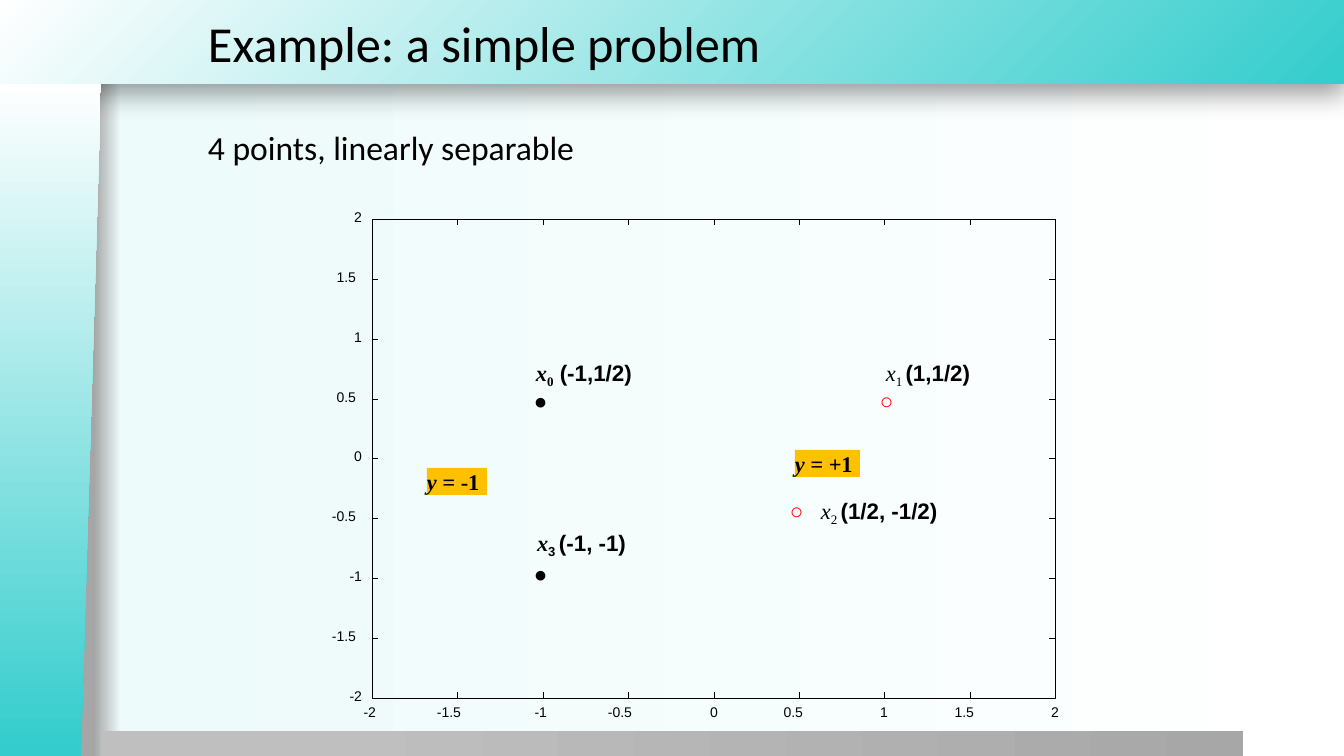
from lxml import etree
from pptx import Presentation
from pptx.dml.color import RGBColor
from pptx.enum.shapes import MSO_CONNECTOR, MSO_SHAPE
from pptx.enum.text import MSO_ANCHOR, PP_ALIGN
from pptx.oxml import parse_xml
from pptx.oxml.ns import nsdecls, qn
from pptx.util import Pt

PX = 914400 / 100.8
BLACK = RGBColor(0x00, 0x00, 0x00)
RED = RGBColor(0xFF, 0x00, 0x00)
AMBER = RGBColor(0xFF, 0xC0, 0x00)
TEAL = RGBColor(0x34, 0xCC, 0xCC)
PALE_TEAL = RGBColor(0xED, 0xFB, 0xFB)
WHITE = RGBColor(0xFF, 0xFF, 0xFF)
GRAY = RGBColor(0xA6, 0xA6, 0xA6)
FOOT_GRAY = RGBColor(0xA7, 0xA7, 0xA7)
LIGHT_GRAY = RGBColor(0xBF, 0xBF, 0xBF)
HAIRLINE = Pt(0.1)
LINEAR = '<a:lin ang="0" scaled="0"/>'
RADIAL = '<a:path path="circle"><a:fillToRect l="100000" t="100000"/></a:path>'

prs = Presentation()
prs.slide_width, prs.slide_height = round(1344 * PX), round(756 * PX)
s = prs.slides.add_slide(prs.slide_layouts[6])


def set_gradient(props, stops, direction=LINEAR):
    """Replace the solid fill in props by a gradient of (percent, colour) stops."""
    gs = "".join(f'<a:gs pos="{pos * 1000}"><a:srgbClr val="{color}"/></a:gs>'
                 for pos, color in stops)
    solid = props.find(qn("a:solidFill"))
    props.replace(solid, parse_xml(
        f'<a:gradFill {nsdecls("a")} rotWithShape="1"><a:gsLst>{gs}</a:gsLst>'
        f'{direction}</a:gradFill>'))


def add_text(runs, x, y, w, h, size=16, font="Times New Roman", color=BLACK,
             fill=None, align=PP_ALIGN.LEFT, anchor=MSO_ANCHOR.TOP, inset=(0, 0)):
    """Add one line of text; runs is a string or a list of (text, style) pairs."""
    sp = s.shapes.add_textbox(*(round(v * PX) for v in (x, y, w, h)))
    if fill is not None:
        sp.fill.solid()
        sp.fill.fore_color.rgb = fill
    tf = sp.text_frame
    tf.word_wrap = False
    tf.vertical_anchor = anchor
    tf.margin_left = tf.margin_right = round(inset[0] * PX)
    tf.margin_top = tf.margin_bottom = round(inset[1] * PX)
    p = tf.paragraphs[0]
    p.alignment = align
    for text, style in [(runs, {})] if isinstance(runs, str) else runs:
        r = p.add_run()
        r.text = text
        r.font.name = style.get("font", font)
        r.font.size = Pt(size)
        r.font.color.rgb = color
        r.font.bold = style.get("bold", False)
        r.font.italic = style.get("italic", False)
        if style.get("sub"):
            r.font._element.set("baseline", "-25000")


# Background and decorative bands
s.background.fill.solid()
s.background.fill.fore_color.rgb = WHITE
set_gradient(s.element.find(".//" + qn("p:bgPr")),
             [(7, GRAY), (9, PALE_TEAL), (100, WHITE)])

bands = []
for kind, box, stops, direction in [
    (MSO_SHAPE.RECTANGLE, (-1, 0, 1345, 84), [(0, TEAL), (100, WHITE)], RADIAL),
    (MSO_SHAPE.RECTANGLE, (101, 731, 1142, 26), [(20, LIGHT_GRAY), (100, FOOT_GRAY)], LINEAR),
    (MSO_SHAPE.FLOWCHART_MANUAL_INPUT, (-286, 370, 673, 101), [(1, TEAL), (100, WHITE)], LINEAR),
]:
    sp = s.shapes.add_shape(kind, *(round(v * PX) for v in box))
    sp.shadow.inherit = False
    sp.line.fill.background()
    sp.fill.solid()
    sp.fill.fore_color.rgb = WHITE
    set_gradient(sp._element.spPr, stops, direction)
    bands.append(sp)

header, footer, side = bands
side.rotation = 270
side._element.spPr.xfrm.set("flipV", "1")
header._element.spPr.find(qn("a:effectLst")).append(parse_xml(
    f'<a:outerShdw {nsdecls("a")} blurRad="{Pt(20)}" dist="{Pt(6)}" dir="5400000" '
    'algn="t" rotWithShape="0"><a:srgbClr val="000000"><a:alpha val="40000"/>'
    '</a:srgbClr></a:outerShdw>'))

add_text("Example: a simple problem", 198, 0, 1146, 84, size=36, font="Calibri",
         anchor=MSO_ANCHOR.MIDDLE, inset=(10, 5))
add_text("4 points, linearly separable", 198, 122, 806, 56, size=24, font="Calibri",
         inset=(10, 5))

# Plot frame, ticks and axis labels
LEFT, TOP, WIDTH, HEIGHT, TICK = 372, 219, 683, 479, 6
RIGHT, BOTTOM = LEFT + WIDTH, TOP + HEIGHT
LABEL_WIDTHS = {1: 10, 2: 15, 3: 23, 4: 28}
frame = s.shapes.add_shape(MSO_SHAPE.RECTANGLE,
                           *(round(v * PX) for v in (LEFT, TOP, WIDTH, HEIGHT)))
frame.shadow.inherit = False
frame.fill.background()
frame.line.color.rgb = BLACK
frame.line.width = HAIRLINE

for i in range(9):
    x = LEFT + round(i * WIDTH / 8)
    y = BOTTOM - round(i * HEIGHT / 8)
    for ends in [(x, BOTTOM, x, BOTTOM - TICK), (x, TOP, x, TOP + TICK),
                 (LEFT, y, LEFT + TICK, y), (RIGHT, y, RIGHT - TICK, y)]:
        tick = s.shapes.add_connector(MSO_CONNECTOR.STRAIGHT, *(round(v * PX) for v in ends))
        tick.line.color.rgb = BLACK
        tick.line.width = HAIRLINE
        etree.SubElement(tick._element.spPr, qn("a:effectLst"))
    label = f"{i / 2 - 2:g}"
    w = LABEL_WIDTHS[len(label)]
    label_right = 356 if i % 2 else 362
    for label_x, label_y in [(x + 4 - w, 704), (label_right - w, y - 10)]:
        add_text(label, label_x, label_y, w, 17, size=10, font="Arial", align=PP_ALIGN.RIGHT)

# Class tags
BOLD = {"bold": True}
BOLD_ITALIC = {"bold": True, "italic": True}
for value, x, y, w in [("+1", 795, 450, 65), ("-1", 427, 468, 60)]:
    add_text([("y = ", BOLD_ITALIC), (value, BOLD)], x, y, w, 27, fill=AMBER)

# Point names with coordinates
for index, coords, x, y, w, bold, sub_font in [
    ("2 ", "(1/2, -1/2)", 821, 497, 129, False, "Times New Roman"),
    ("1 ", "(1,1/2)", 886, 359, 90, False, "Times New Roman"),
    ("0", " (-1,1/2)", 536, 359, 104, True, "Times New Roman"),
    ("3 ", "(-1, -1)", 537, 529, 99, True, "Arial"),
]:
    add_text([("x", {"italic": True, "bold": bold}),
              (index, {"sub": True, "bold": bold, "font": sub_font}),
              (coords, {"bold": True, "font": "Arial"})], x, y, w, 27)

# Point markers
for marker, color, x, y in [("●", BLACK, 524, 382), ("●", BLACK, 524, 555),
                            ("○", RED, 780, 492), ("○", RED, 870, 382)]:
    add_text(marker, x, y, 43, 37, color=color, inset=(10, 5))

prs.save("out.pptx")
